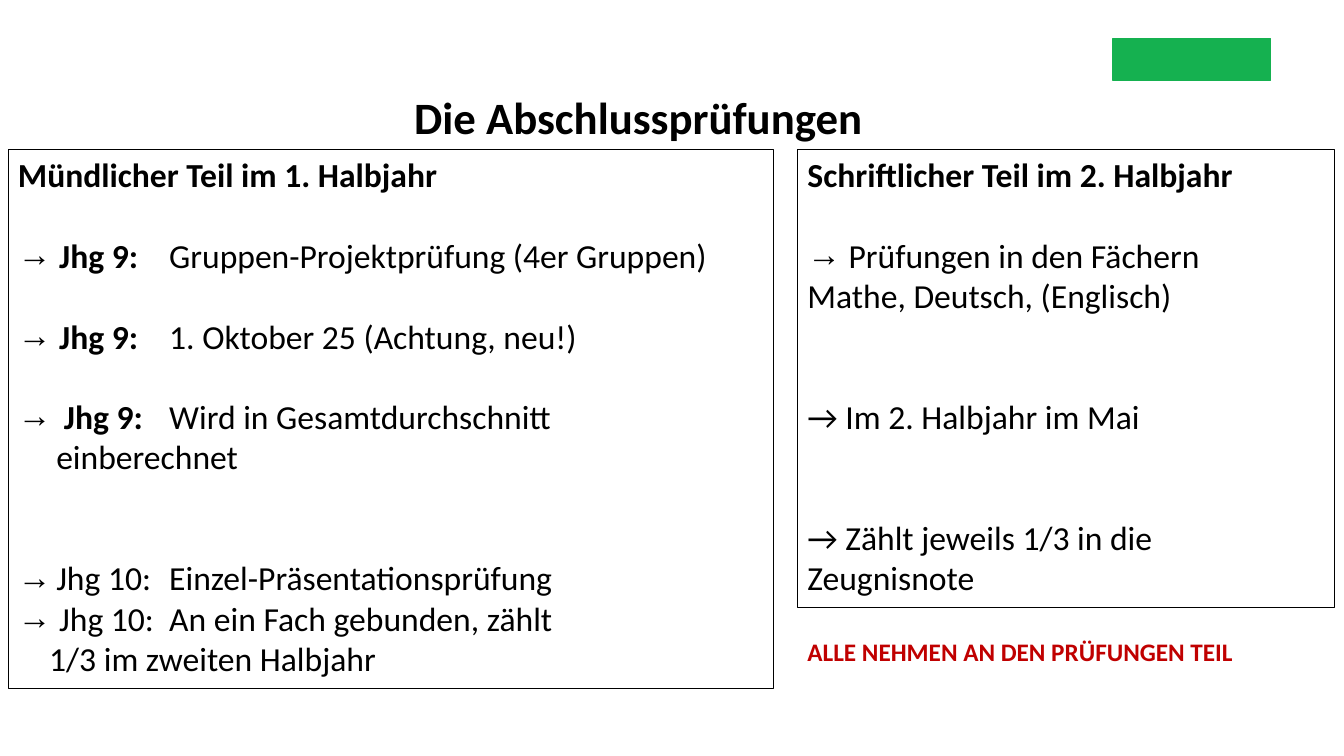
from lxml.etree import SubElement
from pptx import Presentation
from pptx.dml.color import RGBColor
from pptx.enum.shapes import MSO_SHAPE
from pptx.enum.text import MSO_ANCHOR, PP_ALIGN
from pptx.oxml.ns import qn
from pptx.util import Emu, Pt

EMU_PER_PX = 9144
BLANK_LINE = 28.8
BLACK = "000000"
GREEN = "15B150"
RED = "C00000"


def px(length):
    return Emu(length * EMU_PER_PX)


def color(hex_string):
    return RGBColor.from_string(hex_string)


def add_rectangle(slide, box, fill=None, line=BLACK, line_width=0.25):
    shape = slide.shapes.add_shape(MSO_SHAPE.RECTANGLE, *map(px, box))
    shape.shadow.inherit = False
    if fill:
        shape.fill.solid()
        shape.fill.fore_color.rgb = color(fill)
    else:
        shape.fill.background()
    shape.line.color.rgb = color(line)
    shape.line.width = Pt(line_width)
    return shape


def prepare_frame(shape):
    frame = shape.text_frame
    frame.word_wrap = True
    frame.vertical_anchor = MSO_ANCHOR.TOP
    return frame


def write_text(paragraph, text, size=24, bold=False, font_color=BLACK):
    for index, line in enumerate(text.split("\n")):
        if index:
            paragraph.add_line_break()
        run = paragraph.add_run()
        run.text = line
        run.font.name = "Calibri"
        run.font.size = Pt(size)
        run.font.bold = bold
        run.font.color.rgb = color(font_color)


def add_arrow_bullet(paragraph, indent):
    properties = paragraph._p.get_or_add_pPr()
    properties.set("marL", str(px(indent)))
    properties.set("indent", str(-px(indent)))
    SubElement(properties, qn("a:buFont")).set("typeface", "Arial")
    SubElement(properties, qn("a:buChar")).set("char", "→")


def add_label(slide, box, text, **text_format):
    frame = prepare_frame(slide.shapes.add_textbox(*map(px, box)))
    write_text(frame.paragraphs[0], text, bold=True, **text_format)


def add_exam_panel(slide, box, heading, entries):
    frame = prepare_frame(add_rectangle(slide, box))
    paragraph = frame.paragraphs[0]
    paragraph.alignment = PP_ALIGN.LEFT
    write_text(paragraph, heading, bold=True)
    for blank_lines, indent, label, text in entries:
        paragraph = frame.add_paragraph()
        paragraph.alignment = PP_ALIGN.LEFT
        paragraph.space_before = Pt(blank_lines * BLANK_LINE)
        if indent:
            add_arrow_bullet(paragraph, indent)
        if label:
            write_text(paragraph, label, bold=True)
        write_text(paragraph, text)


def main():
    presentation = Presentation()
    presentation.slide_width = px(1333)
    presentation.slide_height = px(750)
    slide = presentation.slides.add_slide(presentation.slide_layouts[6])

    add_rectangle(slide, (1104, 38, 156, 42), fill=GREEN, line=GREEN, line_width=1)
    add_label(slide, (401, 84, 541, 64), "Die Abschlussprüfungen", size=32)

    oral_entries = [
        (1, 31, " Jhg 9:", "\tGruppen-Projektprüfung (4er Gruppen)"),
        (1, 31, " Jhg 9:", "\t1. Oktober 25 (Achtung, neu!)"),
        (1, 38, " Jhg 9:", "\tWird in Gesamtdurchschnitt\neinberechnet"),
        (2, 38, "", "Jhg 10:\tEinzel-Präsentationsprüfung"),
        (0, 31, "", " Jhg 10:\tAn ein Fach gebunden, zählt\n1/3 im zweiten Halbjahr"),
    ]
    add_exam_panel(slide, (8, 148, 759, 535), "Mündlicher Teil im 1. Halbjahr", oral_entries)

    written_entries = [
        (1, 31, "", " Prüfungen in den Fächern"),
        (0, 0, "", "Mathe, Deutsch, (Englisch)"),
        (2, 0, "", "→ Im 2. Halbjahr im Mai"),
        (2, 0, "", "→ Zählt jeweils 1/3 in die\nZeugnisnote"),
    ]
    add_exam_panel(slide, (791, 148, 532, 454), "Schriftlicher Teil im 2. Halbjahr", written_entries)

    add_label(slide, (791, 626, 569, 40), "ALLE NEHMEN AN DEN PRÜFUNGEN TEIL",
              size=18, font_color=RED)
    presentation.save("out.pptx")


if __name__ == "__main__":
    main()
